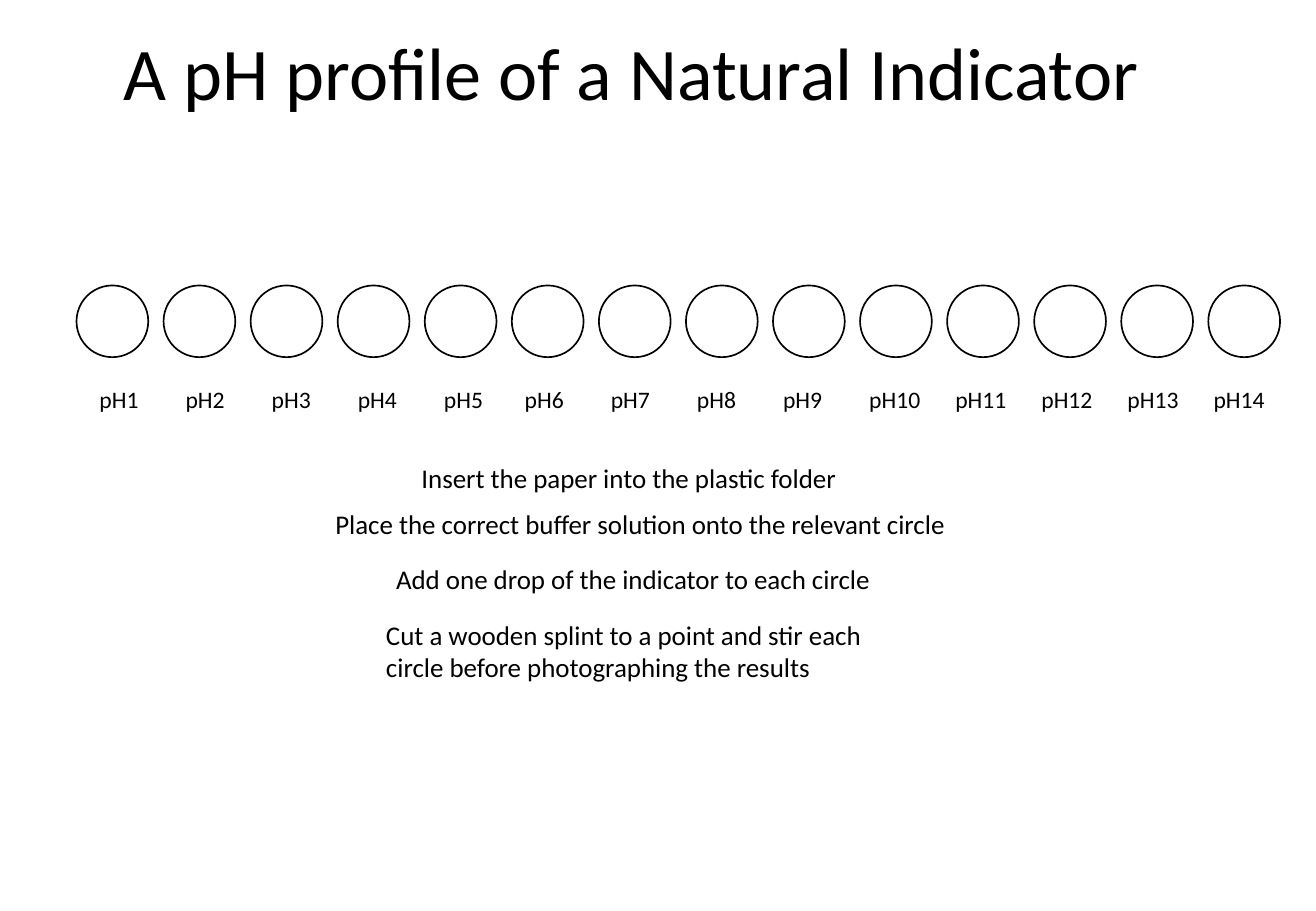
import pptx
import pptx.util
import pptx.dml.color
import pptx.enum.shapes
import pptx.enum.text

Cm = pptx.util.Cm
Pt = pptx.util.Pt
Anchor = pptx.enum.text.MSO_ANCHOR

TITLE = "A pH profile of a Natural Indicator"
PH_LABELS = [f"pH{value}" for value in range(1, 15)]
# text, left, top, width, height in cm
STEPS = [
    ("Insert the paper into the plastic folder", 8.56, 9.53, 10.49, 0.94),
    ("Place the correct buffer solution onto the relevant circle", 6.76, 10.49, 14.4, 0.94),
    ("Add one drop of the indicator to each circle", 8.03, 11.63, 10.69, 0.94),
    ("Cut a wooden splint to a point and stir each circle before photographing the results",
     7.82, 12.8, 10.69, 1.63),
]

THEME = {
    "font": "Calibri",
    "ink": pptx.dml.color.RGBColor(0, 0, 0),
    "paper": pptx.dml.color.RGBColor(255, 255, 255),
    "title": Pt(44),
    "label": Pt(14),
    "step": Pt(16),
    "outline": Pt(1),
}

CIRCLE = {"left": 1.6, "top": 5.97, "pitch": 1.82, "size": 1.5}
LABEL = {"left": 1.83, "top": 7.92, "pitch": 1.8, "width": 1.93, "height": 0.86}
SHIFTED_FROM = 5  # labels from pH6 on sit slightly further left
LABEL_SHIFT = 0.11


def set_all(target, values):
    for name, value in values.items():
        setattr(target, name, value)


def add_text(page, text, place, size, anchor=Anchor.TOP, spacing=None):
    box = page.shapes.add_textbox(*map(Cm, place))
    set_all(box.text_frame, {"word_wrap": True, "vertical_anchor": anchor})
    para = box.text_frame.paragraphs[0]
    para.line_spacing = spacing
    span = para.add_run()
    span.text = text
    set_all(span.font, {"name": THEME["font"], "size": THEME[size]})
    span.font.color.rgb = THEME["ink"]


def add_circle(page, left):
    circle = page.shapes.add_shape(
        pptx.enum.shapes.MSO_SHAPE.OVAL,
        *map(Cm, (left, CIRCLE["top"], CIRCLE["size"], CIRCLE["size"])))
    circle.shadow.inherit = False
    circle.fill.solid()
    circle.fill.fore_color.rgb = THEME["paper"]
    circle.line.color.rgb = THEME["ink"]
    circle.line.width = THEME["outline"]


def main():
    deck = pptx.Presentation()
    set_all(deck, {"slide_width": Cm(27.51), "slide_height": Cm(19.05)})
    page = deck.slides.add_slide(deck.slide_layouts[6])

    add_text(page, TITLE, (2.34, -0.25, 23.72, 3.68), "title", Anchor.MIDDLE, 0.9)
    for index, label in enumerate(PH_LABELS):
        add_circle(page, CIRCLE["left"] + index * CIRCLE["pitch"])
        shift = LABEL_SHIFT if index >= SHIFTED_FROM else 0
        left = LABEL["left"] + index * LABEL["pitch"] - shift
        add_text(page, label, (left, LABEL["top"], LABEL["width"], LABEL["height"]), "label")
    for text, *place in STEPS:
        add_text(page, text, place, "step")

    deck.save("out.pptx")


if __name__ == "__main__":
    main()
